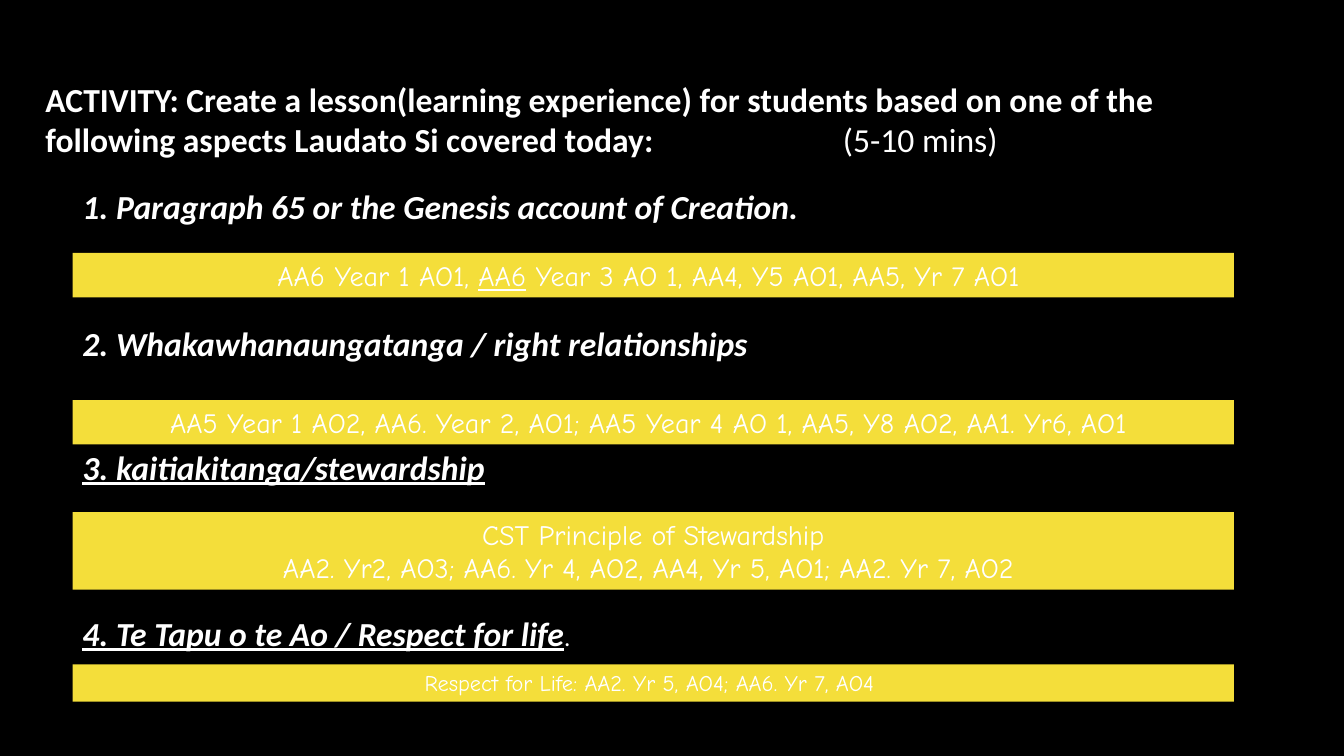
from lxml import etree
from pptx import Presentation
from pptx.dml.color import RGBColor
from pptx.enum.shapes import MSO_SHAPE
from pptx.enum.text import MSO_ANCHOR, PP_ALIGN
from pptx.oxml.ns import qn
from pptx.util import Inches, Pt

RECTANGLE = MSO_SHAPE.RECTANGLE
TOP, MIDDLE = MSO_ANCHOR.TOP, MSO_ANCHOR.MIDDLE
LEFT, CENTER = PP_ALIGN.LEFT, PP_ALIGN.CENTER

WIDTH, HEIGHT = Inches(13.33), Inches(7.5)
BLACK, WHITE, YELLOW = "000000", "FFFFFF", "F4DE3A"
HEADING_FONT, CODES_FONT = "Calibri", "Comic Neue"
MARGIN, SPAN = 5.4, 86.42
HEADING_ROWS = 6.67

ASPECTS = [
    (23.87, [("1. Paragraph 65 or the Genesis account of Creation.", {})]),
    (42, [("2. Whakawhanaungatanga / right relationships", {})]),
    (58.4, [("3. kaitiakitanga/stewardship", {"underline": True})]),
    (80.4, [("4. Te Tapu o te Ao / Respect for life", {"underline": True}),
            (".", {"size": 18, "bold": False, "italic": False})]),
]

OBJECTIVES = [
    (33.47, 5.87, 20, [[("AA6 Year 1 AO1, ", {}), ("AA6", {"underline": True}),
                        (" Year 3 AO 1, AA4, Y5 AO1, AA5, Yr 7 AO1 ", {})]]),
    (52.93, 5.87, 20, [[("AA5 Year 1 AO2, AA6. Year 2, AO1; AA5 Year 4 AO 1, "
                         "AA5, Y8 AO2, AA1. Yr6, AO1 ", {})]]),
    (67.73, 10.27, 20, [[("CST Principle of Stewardship", {})],
                        [("AA2. Yr2, AO3; AA6. Yr 4, AO2, AA4, Yr 5, AO1; "
                          "AA2. Yr 7, AO2 ", {})]]),
    (87.87, 4.93, 16, [[("Respect for Life: AA2. Yr 5, AO4; AA6. Yr 7, AO4 ", {})]]),
]


def colour(hex_value):
    """Turn a hex string into a colour."""
    return RGBColor.from_string(hex_value)


def area(left, top, width, height):
    """Turn percentages of the slide into left, top, width and height."""
    return (round(WIDTH * left / 100), round(HEIGHT * top / 100),
            round(WIDTH * width / 100), round(HEIGHT * height / 100))


def write_runs(paragraph, pieces, font_name, size, bold=False, italic=False):
    """Write white runs, each with its own changes to the shared format."""
    for words, changes in pieces:
        run = paragraph.add_run()
        run.text = words
        font = run.font
        font.name = font_name
        font.size = Pt(changes.get("size", size))
        font.bold = changes.get("bold", bold)
        font.italic = changes.get("italic", italic)
        font.underline = changes.get("underline", False)
        font.color.rgb = colour(WHITE)


def add_tab_stop(paragraph, position):
    """Give the paragraph one left tab stop."""
    stops = etree.SubElement(paragraph._p.get_or_add_pPr(), qn("a:tabLst"))
    etree.SubElement(stops, qn("a:tab"), pos=str(position), algn="l")


def fill_title(slide):
    """Place the activity instruction and its duration in the title."""
    title = slide.shapes.title
    title.left, title.top, title.width, title.height = area(2.63, 9.73, 91.67, 17.47)
    title.text_frame.vertical_anchor = TOP
    title.text_frame.word_wrap = True
    instruction = title.text_frame.paragraphs[0]
    instruction.alignment = LEFT
    add_tab_stop(instruction, Inches(7.91))
    write_runs(instruction, [
        ("ACTIVITY: Create a lesson(learning experience) for students based on "
         "one of the following aspects Laudato Si covered today:\t", {}),
        ("(5-10 mins)", {"bold": False})], HEADING_FONT, 24, bold=True)


def add_aspect(slide, top, pieces):
    """Add the numbered heading of one aspect."""
    heading = slide.shapes.add_textbox(*area(MARGIN, top, SPAN, HEADING_ROWS))
    heading.text_frame.word_wrap = True
    write_runs(heading.text_frame.paragraphs[0], pieces, HEADING_FONT, 24,
               bold=True, italic=True)


def add_objectives(slide, top, height, size, lines):
    """Add a yellow bar listing the achievement objectives of one aspect."""
    bar = slide.shapes.add_shape(RECTANGLE, *area(MARGIN, top, SPAN, height))
    bar.shadow.inherit = False
    bar.fill.solid()
    bar.fill.fore_color.rgb = colour(YELLOW)
    bar.line.fill.background()
    frame = bar.text_frame
    frame.word_wrap = True
    frame.vertical_anchor = MIDDLE
    for index, pieces in enumerate(lines):
        paragraph = frame.add_paragraph() if index else frame.paragraphs[0]
        paragraph.alignment = CENTER
        write_runs(paragraph, pieces, CODES_FONT, size)


def main():
    """Build the activity slide and save it."""
    presentation = Presentation()
    presentation.slide_width, presentation.slide_height = WIDTH, HEIGHT
    slide = presentation.slides.add_slide(presentation.slide_layouts[5])
    slide.background.fill.solid()
    slide.background.fill.fore_color.rgb = colour(BLACK)
    fill_title(slide)
    for aspect, objectives in zip(ASPECTS, OBJECTIVES):
        add_aspect(slide, *aspect)
        add_objectives(slide, *objectives)
    presentation.save("out.pptx")


if __name__ == "__main__":
    main()
